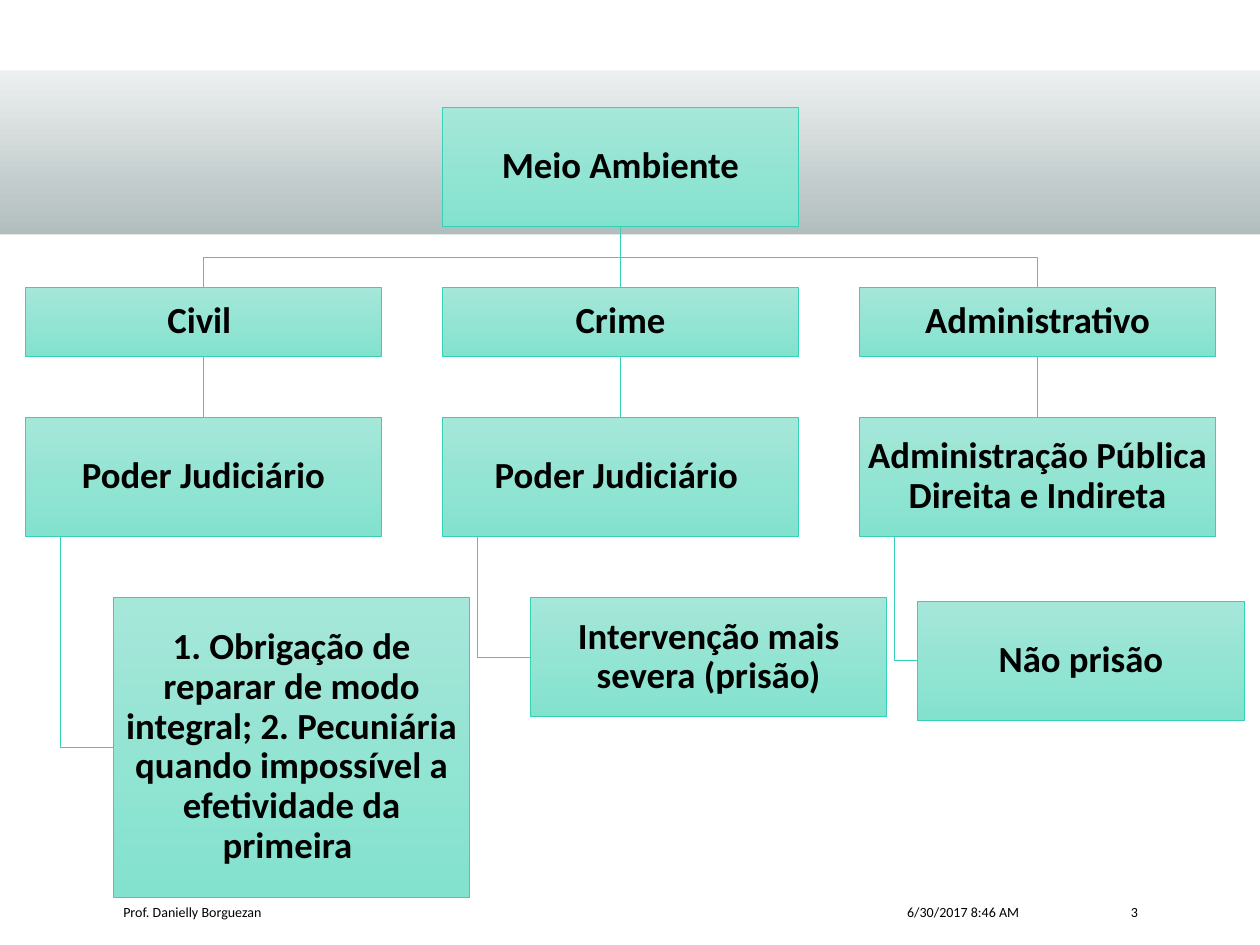
from lxml import etree
from pptx import Presentation
from pptx import util as u
from pptx.dml.color import RGBColor
from pptx.enum import shapes as sh, text as t
from pptx.oxml.ns import qn

HUES = {"line": "36D2B8", "top": "A5E7D9", "base": "83E2CE", "ink": "000000",
        "white": "FFFFFF", "pale": "EFF2F2", "grey": "B0BCBC"}
ROOT = "Meio Ambiente"
COLS = [
    ("Civil ", "Poder Judiciário",
     "1. Obrigação de reparar de modo integral; 2. Pecuniária quando "
     "impossível a efetividade da primeira ", (0.7, 4.74, 2.83, 2.38)),
    ("Crime", "Poder Judiciário ",
     "Intervenção mais severa (prisão)", (0.7, 4.74, 2.83, 0.95)),
    ("Administrativo", "Administração Pública Direita e Indireta",
     "Não prisão", (0.46, 4.77, 2.6, 0.95)),
]
FOOT = [
    ("6/30/2017 8:46 AM", 6.88, 1.31, t.PP_ALIGN.RIGHT),
    ("Prof. Danielly Borguezan", 0.88, 5.81, t.PP_ALIGN.LEFT),
    ("3", 8.38, 0.75, t.PP_ALIGN.RIGHT),
]
BANDS = [(0.5, 1.39, ("pale", "grey")), (1.86, 0.06, ("white",)),
         (0.5, 0.06, ("white",))]
LEFT, STEP, WIDE, TALL, LOW = 0.2, 3.31, 2.83, 0.95, 0.55
TOP, MID, DEEP = 0.85, 2.28, 3.31
STEM = 0.28

deck = Presentation()
deck.slide_width, deck.slide_height = u.Inches(10), u.Inches(7.5)
slide = deck.slides.add_slide(deck.slide_layouts[6])


def hue(name):
    return RGBColor.from_string(HUES[name])


def pen(line):
    line.color.rgb = hue("line")
    line.width = u.Pt(0.5)


def write(shape, words, size=21, bold=True, align=t.PP_ALIGN.CENTER,
          space=0.9, inset=0.01):
    frame = shape.text_frame
    frame.word_wrap = True
    frame.vertical_anchor = t.MSO_ANCHOR.MIDDLE
    frame.margin_left = frame.margin_right = u.Inches(inset)
    frame.margin_top = frame.margin_bottom = u.Inches(0.01)
    para = frame.paragraphs[0]
    para.alignment, para.line_spacing = align, space
    run = para.add_run()
    run.text = words
    font = run.font
    font.name, font.size, font.bold = "Calibri", u.Pt(size), bold
    font.color.rgb = hue("ink")


def rect(spot, tones, edge=False):
    shape = slide.shapes.add_shape(sh.MSO_SHAPE.RECTANGLE, *map(u.Inches, spot))
    shape.shadow.inherit = False
    if len(tones) > 1:
        shape.fill.gradient()
        shape.fill.gradient_angle = 270
        for stop, tone in zip(shape.fill.gradient_stops, tones):
            stop.color.rgb = hue(tone)
    else:
        shape.fill.solid()
        shape.fill.fore_color.rgb = hue(tones[0])
    if edge:
        pen(shape.line)
    else:
        shape.line.fill.background()
    return shape


def box(words, *spot):
    write(rect(spot, ("top", "base"), edge=True), words)


def link(*dots):
    dots = [(u.Inches(x), u.Inches(y)) for x, y in dots]
    if len(dots) == 2:
        wire = slide.shapes.add_connector(sh.MSO_CONNECTOR.STRAIGHT,
                                          *dots[0], *dots[1])
        etree.SubElement(wire.line._get_or_add_ln().getparent(),
                         qn("a:effectLst"))
        pen(wire.line)
        return
    form = slide.shapes.build_freeform(*dots[0])
    form.add_line_segments(dots[1:], close=False)
    wire = form.convert_to_shape()
    wire.shadow.inherit = False
    wire.fill.background()
    pen(wire.line)


for y, high, tones in BANDS:
    rect((0, y, 10, high), tones)

for words, x, wide, align in FOOT:
    area = slide.shapes.add_textbox(*map(u.Inches, (x, 7.13, wide, 0.22)))
    write(area, words, size=8, bold=False, align=align, space=1, inset=0.1)

hub = LEFT + STEP + WIDE / 2
fork = (TOP + TALL + MID) / 2
for i, (kind, power, result, (shift, y, wide, high)) in enumerate(COLS):
    x = LEFT + i * STEP
    axis = x + WIDE / 2
    if i == 1:
        link((hub, TOP + TALL), (hub, MID))
    else:
        link((hub, TOP + TALL), (hub, fork), (axis, fork), (axis, MID))
    link((axis, MID + LOW), (axis, DEEP))
    link((x + STEM, DEEP + TALL), (x + STEM, y + high / 2),
         (x + shift, y + high / 2))
    box(kind, x, MID, WIDE, LOW)
    box(power, x, DEEP, WIDE, TALL)
    box(result, x + shift, y, wide, high)
box(ROOT, LEFT + STEP, TOP, WIDE, TALL)

deck.save("out.pptx")
